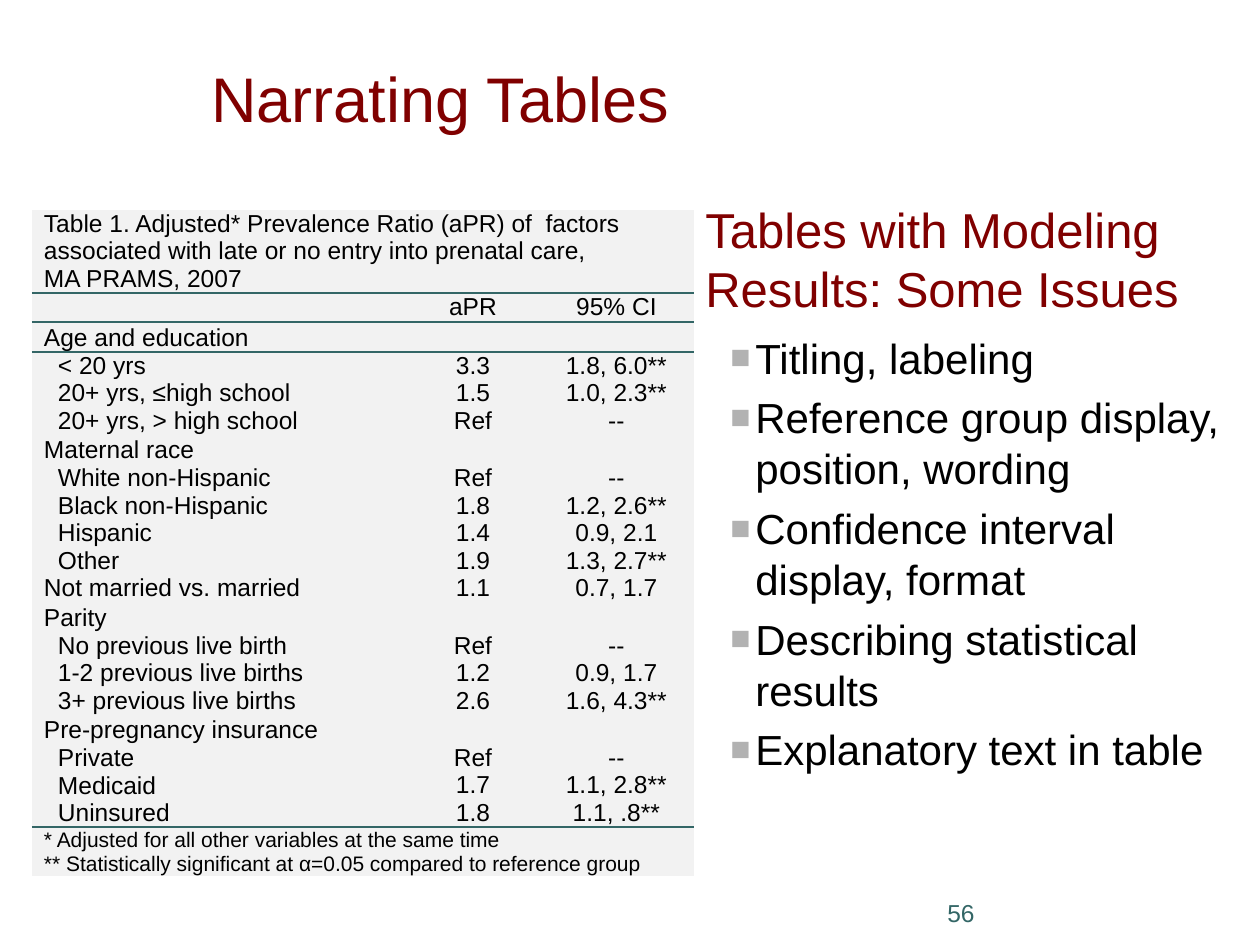
from lxml import etree
from pptx import Presentation
from pptx.dml.color import RGBColor
from pptx.enum.text import MSO_ANCHOR, PP_ALIGN
from pptx.oxml.ns import qn
from pptx.util import Emu, Pt

LEFT, CENTER = PP_ALIGN.LEFT, PP_ALIGN.CENTER
TOP, MIDDLE, BOTTOM = MSO_ANCHOR.TOP, MSO_ANCHOR.MIDDLE, MSO_ANCHOR.BOTTOM
PX = 914400 / 126
COLORS = {"title": "800000", "teal": "336666", "text": "000000",
          "bullet": "B2B2B2", "cell": "F2F2F2"}
PLAIN_TABLE = "{2D5ABB26-0587-4C30-8999-92F81FD0307C}"

# A vertical tab becomes a line break inside the paragraph
CAPTION = ("Table 1. Adjusted* Prevalence Ratio (aPR) of  factors associated with "
           "late or no entry into prenatal care, \vMA PRAMS, 2007")
HEADING = "Tables with Modeling \vResults: Some Issues"
# Group headings carry no values; their members are indented
GROUPS = [
    ("Age and education", "", "", [
        ("< 20 yrs", "3.3", "1.8, 6.0**"),
        ("20+ yrs, ≤high school", "1.5", "1.0, 2.3**"),
        ("20+ yrs, > high school", "Ref", "--")]),
    ("Maternal race", "", "", [
        ("White non-Hispanic", "Ref", "--"),
        ("Black non-Hispanic", "1.8", "1.2, 2.6**"),
        ("Hispanic", "1.4", "0.9, 2.1"),
        ("Other", "1.9", "1.3, 2.7**")]),
    ("Not married vs. married", "1.1", "0.7, 1.7", []),
    ("Parity", "", "", [
        ("No previous live birth", "Ref", "--"),
        ("1-2 previous live births", "1.2", "0.9, 1.7"),
        ("3+ previous live births", "2.6", "1.6, 4.3**")]),
    ("Pre-pregnancy insurance", "", "", [
        ("Private", "Ref", "--"),
        ("Medicaid", "1.7", "1.1, 2.8**"),
        ("Uninsured", "1.8", "1.1, .8**")]),
]
FOOTNOTES = ["* Adjusted for all other variables at the same time",
             "** Statistically significant at α=0.05 compared to reference group"]
ISSUES = ["Titling, labeling", "Reference group display, position, wording",
          "Confidence interval display, format", "Describing statistical results",
          "Explanatory text in table"]


def px(value):
    return Emu(round(value * PX))


def add_node(parent, tag, **attributes):
    return etree.SubElement(parent, qn(tag), attributes)


class SlideBuilder:
    font = "Arial"

    def __init__(self, page):
        self.page = page

    def fill_text(self, frame, lines, size, color="text", align=LEFT, spacing=None,
                  before=0, margin=0, hanging=0):
        frame.text = "\n".join(lines)
        for para in frame.paragraphs:
            para.alignment = align
            para.space_before = Pt(before)
            if spacing:
                para.line_spacing = Pt(spacing)
            properties = para._p.get_or_add_pPr()
            properties.set("marL", str(px(margin)))
            properties.set("indent", str(px(-hanging)))
            for span in para.runs:
                span.font.name = self.font
                span.font.size = Pt(size)
                span.font.color.rgb = RGBColor.from_string(COLORS[color])
            if not para.runs:
                add_node(para._p, "a:endParaRPr", sz=str(size * 100))

    def text(self, left, top, width, height, lines, size, anchor=TOP, **style):
        box = self.page.shapes.add_textbox(px(left), px(top), px(width), px(height))
        frame = box.text_frame
        frame.word_wrap = True
        frame.vertical_anchor = anchor
        self.fill_text(frame, lines, size, **style)
        return frame

    def bullets(self, *place, **style):
        for para in self.text(*place, **style).paragraphs:
            properties = para._p.get_or_add_pPr()
            color = add_node(properties, "a:buClr")
            add_node(color, "a:srgbClr", val=COLORS["bullet"])
            add_node(properties, "a:buSzPct", val="80000")
            add_node(properties, "a:buFont", typeface=self.font)
            add_node(properties, "a:buChar", char="■")

    def table(self, left, top, widths, heights):
        frame = self.page.shapes.add_table(len(heights), len(widths), px(left), px(top),
                                           px(sum(widths)), px(sum(heights)))
        table = frame.table
        table.first_row = table.horz_banding = False
        table._tbl.tblPr.find(qn("a:tableStyleId")).text = PLAIN_TABLE
        for column, width in zip(table.columns, widths):
            column.width = px(width)
        for row, height in zip(table.rows, heights):
            row.height = px(height)
        return table

    def cell(self, cell, lines, size=14, anchor=BOTTOM, spacing=15.75, **style):
        cell.margin_left = cell.margin_right = px(12)
        cell.margin_top = cell.margin_bottom = 0
        cell.vertical_anchor = anchor
        cell.fill.solid()
        cell.fill.fore_color.rgb = RGBColor.from_string(COLORS["cell"])
        self.fill_text(cell.text_frame, lines, size, spacing=spacing, **style)

    def rule_below(self, table, row, points):
        # The edge is shared, so both neighbouring rows state it
        for index, tag in ((row, "a:lnB"), (row + 1, "a:lnT")):
            for cell in table.rows[index].cells:
                properties = cell._tc.get_or_add_tcPr()
                line = etree.Element(qn(tag), w=str(Pt(points)))
                fill = add_node(line, "a:solidFill")
                add_node(fill, "a:srgbClr", val=COLORS["teal"])
                properties.insert(len(properties.findall(qn("a:lnT"))), line)


def main():
    deck = Presentation()
    deck.slide_width, deck.slide_height = px(1260), px(945)
    builder = SlideBuilder(deck.slides.add_slide(deck.slide_layouts[6]))

    # Page number, heading and list of issues
    builder.text(935, 892, 262, 32, ["56"], 14, color="teal")
    builder.text(63, 179, 1176, 158, [HEADING], 28, MIDDLE, color="title",
                 spacing=33.75, margin=630)
    builder.bullets(73, 325, 1187, 651, ISSUES, 24, spacing=29.25, before=4.8,
                    margin=670, hanging=25)

    # Results table
    rows = [("", "aPR", "95% CI", 0)]
    for name, ratio, interval, members in GROUPS:
        rows.append((name, ratio, interval, 0))
        rows += [(*member, 14) for member in members]
    last = len(rows) + 1
    table = builder.table(32, 210, [375, 132, 155], [82] + [27.6] * len(rows) + [49])
    for index in (0, last):
        table.cell(index, 0).merge(table.cell(index, 2))
    builder.cell(table.cell(0, 0), [CAPTION])
    for index, (name, ratio, interval, margin) in enumerate(rows, 1):
        builder.cell(table.cell(index, 0), [name], margin=margin)
        for column, value in ((1, ratio), (2, interval)):
            builder.cell(table.cell(index, column), [value], anchor=TOP, align=CENTER)
    builder.cell(table.cell(last, 0), FOOTNOTES, 12, TOP, 14)
    for row, points in ((0, 1), (1, 1.5), (last - 1, 1)):
        builder.rule_below(table, row, points)

    # Slide title
    builder.text(199, 0, 966, 194, ["Narrating Tables"], 36, MIDDLE, color="title")

    deck.save("out.pptx")


if __name__ == "__main__":
    main()
